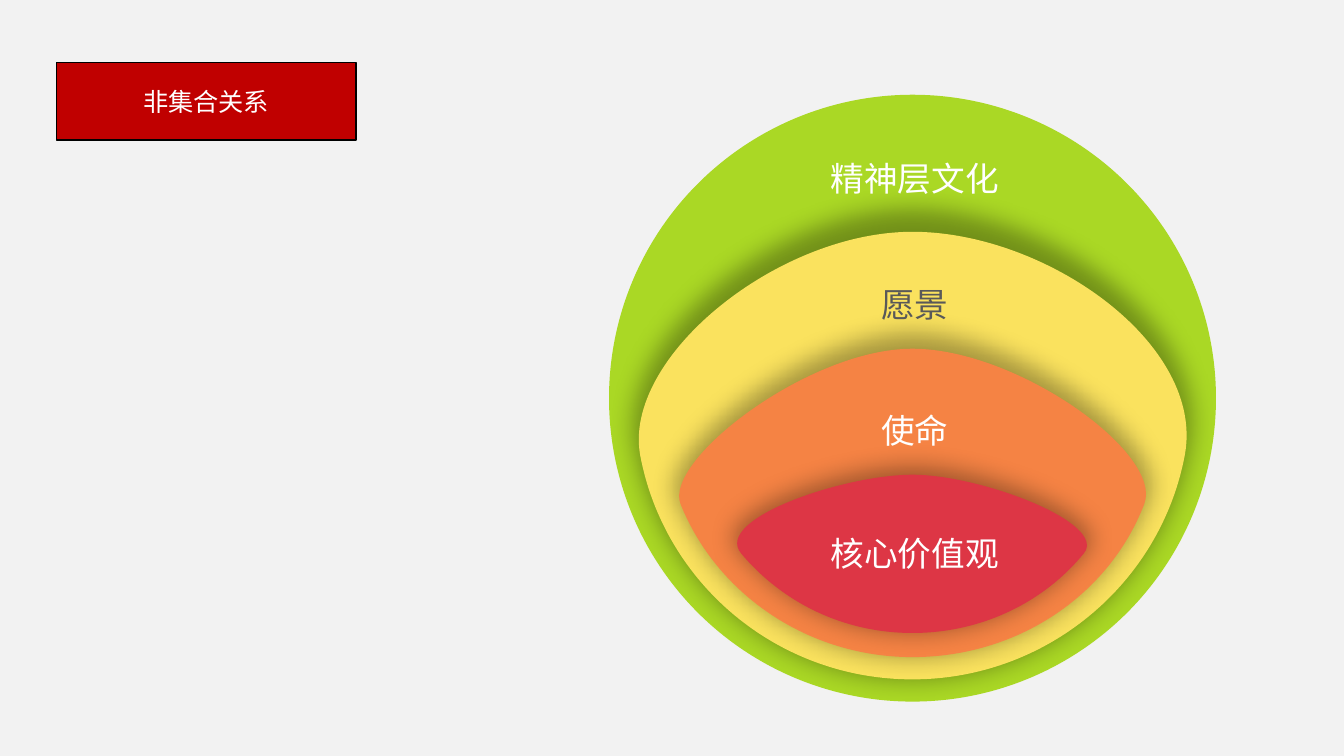
from lxml import etree
from pptx import Presentation
from pptx.dml.color import RGBColor
from pptx.enum.shapes import MSO_SHAPE as Shape
from pptx.enum.text import MSO_ANCHOR as Anchor, MSO_AUTO_SIZE as AutoSize, PP_ALIGN as Align
from pptx.oxml import parse_xml
from pptx.oxml.ns import nsdecls, qn
from pptx.util import Inches, Pt

BACKGROUND = RGBColor(0xF2, 0xF2, 0xF2)
DARK_RED = RGBColor(0xC0, 0x00, 0x00)
BLACK = RGBColor(0x00, 0x00, 0x00)
WHITE = RGBColor(0xFF, 0xFF, 0xFF)
GRAY = RGBColor(0x59, 0x59, 0x59)
GREEN = RGBColor(0xAA, 0xD8, 0x25)
YELLOW = RGBColor(0xFA, 0xE2, 0x5E)
ORANGE = RGBColor(0xF5, 0x83, 0x44)
CRIMSON = RGBColor(0xDD, 0x36, 0x45)
FONT = "Noto Sans CJK SC"


def write(shape, text, size, color):
    paragraph = shape.text_frame.paragraphs[0]
    run = paragraph.add_run()
    run.text = text
    paragraph.font.size = Pt(size)
    paragraph.font.name = FONT
    paragraph.font.color.rgb = color
    east_asian = etree.SubElement(paragraph.font._element, qn("a:ea"))
    east_asian.set("typeface", FONT)
    return paragraph


def add_layer(shapes, points, color):
    corners = [(Inches(x), Inches(y)) for x, y in points]
    builder = shapes.build_freeform(*corners[0])
    builder.add_line_segments(corners[1:], close=True)
    layer = builder.convert_to_shape()
    layer.fill.solid()
    layer.fill.fore_color.rgb = color
    layer.line.fill.background()
    segments = list(layer._element.iter(qn("a:lnTo")))
    for start in range(0, len(segments), 3):
        curve = etree.Element(qn("a:cubicBezTo"))
        segments[start].addprevious(curve)
        for segment in segments[start:start + 3]:
            curve.append(segment[0])
            segment.getparent().remove(segment)
    layer._element.spPr.append(parse_xml(
        f'<a:effectLst {nsdecls("a")}><a:outerShdw blurRad="{Pt(17)}" dist="0" dir="0" '
        'sx="102000" sy="105000" algn="b" rotWithShape="0">'
        '<a:srgbClr val="000000"><a:alpha val="32000"/></a:srgbClr>'
        '</a:outerShdw></a:effectLst>'))


presentation = Presentation()
presentation.slide_width = Inches(13.33)
presentation.slide_height = Inches(7.5)
slide = presentation.slides.add_slide(presentation.slide_layouts[6])
slide.background.fill.solid()
slide.background.fill.fore_color.rgb = BACKGROUND

title = slide.shapes.add_shape(
    Shape.RECTANGLE, Inches(0.56), Inches(0.62), Inches(2.97), Inches(0.77))
title.shadow.inherit = False
title.fill.solid()
title.fill.fore_color.rgb = DARK_RED
title.line.color.rgb = BLACK
title.line.width = Pt(1)
title.text_frame.vertical_anchor = Anchor.MIDDLE
write(title, "非集合关系", 18, WHITE).alignment = Align.CENTER

layers = slide.shapes.add_group_shape()
circle = layers.shapes.add_shape(
    Shape.OVAL, Inches(6.04), Inches(0.94), Inches(6.02), Inches(6.02))
circle.shadow.inherit = False
circle.fill.solid()
circle.fill.fore_color.rgb = GREEN
circle.line.fill.background()

vision = [
    (6.35, 4.52), (6.59, 5.79), (7.71, 6.74), (9.05, 6.74),
    (10.38, 6.74), (11.51, 5.79), (11.75, 4.52),
    (11.96, 3.42), (10.38, 2.3), (9.05, 2.3),
    (7.71, 2.3), (6.17, 3.55), (6.35, 4.52)]
mission = [
    (6.75, 5), (7.11, 5.9), (8.02, 6.52), (9.05, 6.52),
    (10.09, 6.52), (11, 5.91), (11.35, 5),
    (11.54, 4.5), (10.09, 3.46), (9.05, 3.46),
    (8.02, 3.46), (6.58, 4.57), (6.75, 5)]
values = [
    (9.05, 6.28), (9.73, 6.28), (10.35, 5.98), (10.75, 5.49),
    (10.99, 5.19), (9.73, 4.71), (9.05, 4.71),
    (8.37, 4.71), (7.07, 5.15), (7.35, 5.49),
    (7.76, 5.98), (8.37, 6.28), (9.05, 6.28)]
for points, color in [(vision, YELLOW), (mission, ORANGE), (values, CRIMSON)]:
    add_layer(layers.shapes, points, color)

labels = [
    ("精神层文化", 8.14, 1.52, 1.88, WHITE),
    ("核心价值观", 8.14, 5.24, 1.88, WHITE),
    ("使命", 8.64, 4.02, 0.88, WHITE),
    ("愿景", 8.64, 2.77, 0.88, GRAY)]
for text, left, top, width, color in labels:
    label = slide.shapes.add_textbox(Inches(left), Inches(top), Inches(width), Inches(0.5))
    label.text_frame.word_wrap = False
    label.text_frame.auto_size = AutoSize.SHAPE_TO_FIT_TEXT
    write(label, text, 24, color)

presentation.save("out.pptx")
